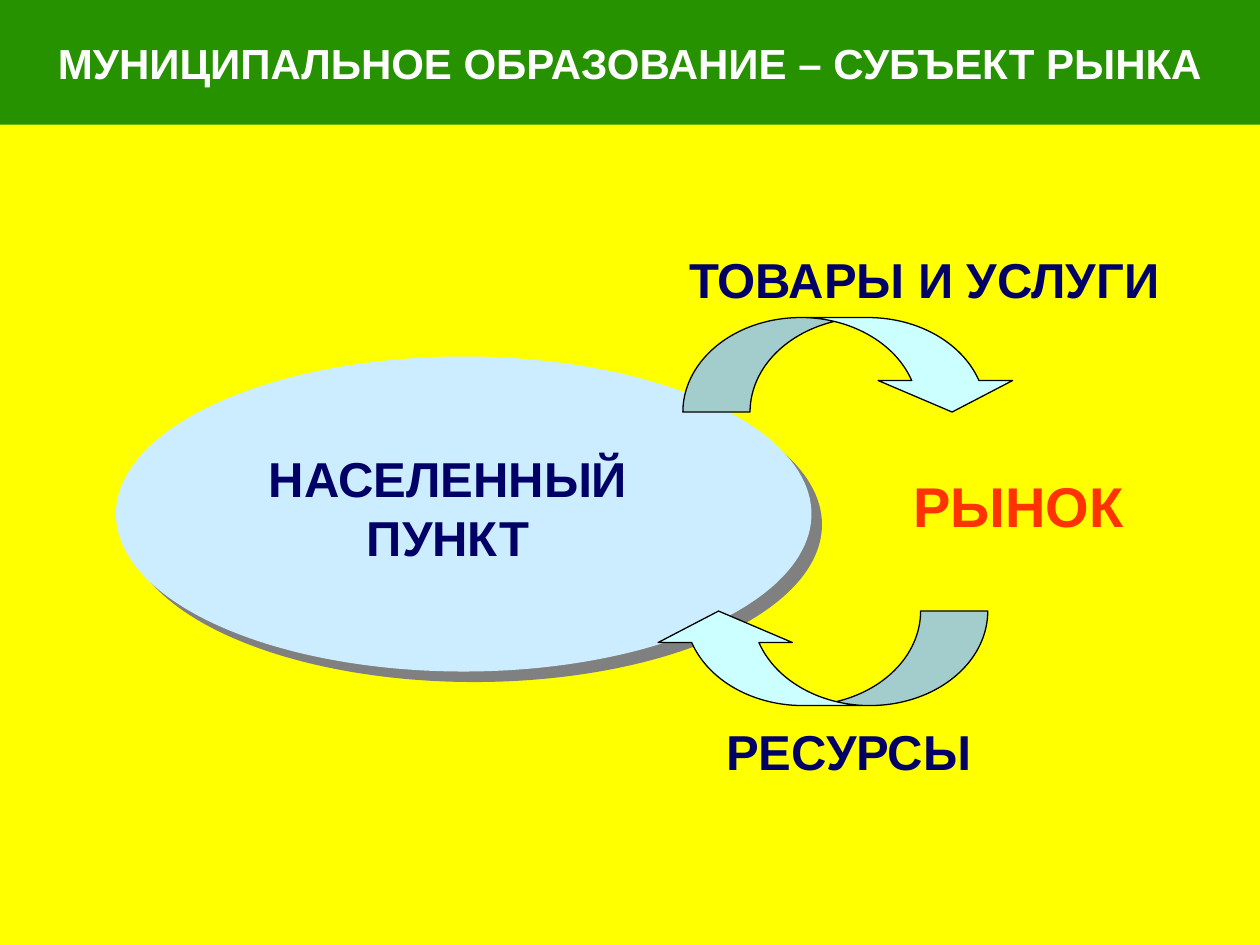
from lxml import etree
from pptx import Presentation
from pptx import util as u
from pptx.dml import color
from pptx.enum import shapes, text
from pptx.oxml import ns

HEX = {
    "page": "FFFF00", "band": "008000", "title": "FFFFFF", "town": "CCECFF",
    "arrow": "CCFFFF", "line": "000000", "label": "000066",
    "market": "FF3300", "shade": "808080",
}
KIND = shapes.MSO_SHAPE


def rgb(name):
    return color.RGBColor.from_string(HEX[name])


def paint(fill, name):
    fill.solid()
    fill.fore_color.rgb = rgb(name)


def add_tag(parent, tag, **attrs):
    node = etree.SubElement(parent, ns.qn(tag))
    for key, value in attrs.items():
        node.set(key, str(value))
    return node


def add_form(home, kind, box, fill):
    form = home.add_shape(kind, *map(u.Inches, box))
    form.shadow.inherit = False
    paint(form.fill, fill)
    form.line.fill.background()
    return form


def write(form, words, size, tint):
    frame = form.text_frame
    frame.word_wrap = True
    par = frame.paragraphs[0]
    par.alignment = text.PP_ALIGN.CENTER
    run = par.add_run()
    run.text = words
    look = {"name": "Arial", "size": u.Pt(size), "bold": True}
    for key, value in look.items():
        setattr(run.font, key, value)
    run.font.color.rgb = rgb(tint)


def add_label(home, words, box, size=28, tint="label"):
    label = home.add_textbox(*map(u.Inches, box))
    write(label, words, size, tint)
    label.text_frame.auto_size = text.MSO_AUTO_SIZE.SHAPE_TO_FIT_TEXT


def add_band(home, words):
    band = add_form(home, KIND.RECTANGLE, (0, 0, 10, 0.99), "band")
    tone = band.fill._xPr.find(".//" + ns.qn("a:srgbClr"))
    add_tag(tone, "a:alpha", val=85000)
    band.text_frame.vertical_anchor = text.MSO_ANCHOR.MIDDLE
    write(band, words, 24, "title")


def add_town(home, words):
    """Ellipse with a hard drop shadow and its name."""
    group = home.add_group_shape().shapes
    town = add_form(group, KIND.OVAL, (0.92, 2.83, 5.52, 2.5), "town")
    effects = town._element.spPr.find(ns.qn("a:effectLst"))
    shade = add_tag(effects, "a:outerShdw", dist=u.Pt(8.5), dir=45 * 60000,
                    algn="ctr", rotWithShape=0)
    add_tag(shade, "a:srgbClr", val=HEX["shade"])
    add_label(group, words, (1.61, 3.51, 3.89, 1.03))


def add_flow(home, words, spot, box, back=False):
    """Curved arrow with its label; back turns it to point the other way."""
    group = home.add_group_shape().shapes
    arrow = add_form(group, KIND.CURVED_DOWN_ARROW, (*spot, 2.67, 0.75), "arrow")
    for i, value in enumerate((0.711, 1.422, 0.333)):
        arrow.adjustments[i] = value
    paint(arrow.line.fill, "line")
    arrow.line.width = u.Pt(0.75)
    if back:
        frame = arrow._element.spPr.find(ns.qn("a:xfrm"))
        for key in ("flipH", "flipV"):
            frame.set(key, "1")
    add_label(group, words, box)


def main():
    deck = Presentation()
    deck.slide_width, deck.slide_height = u.Inches(10), u.Inches(7.5)
    slide = deck.slides.add_slide(deck.slide_layouts[6])
    paint(slide.background.fill, "page")
    home = slide.shapes
    add_town(home, "НАСЕЛЕННЫЙ ПУНКТ")
    add_flow(home, "РЕСУРСЫ", (5.17, 4.85), (5.58, 5.68, 2.31, 0.57), back=True)
    add_flow(home, "ТОВАРЫ И УСЛУГИ", (5.42, 2.52), (5.25, 1.93, 4.17, 0.57))
    add_band(home, "МУНИЦИПАЛЬНОЕ ОБРАЗОВАНИЕ – СУБЪЕКТ РЫНКА")
    add_label(home, "РЫНОК", (6.75, 3.69, 2.67, 0.63), 32, "market")
    deck.save("out.pptx")


if __name__ == "__main__":
    main()
